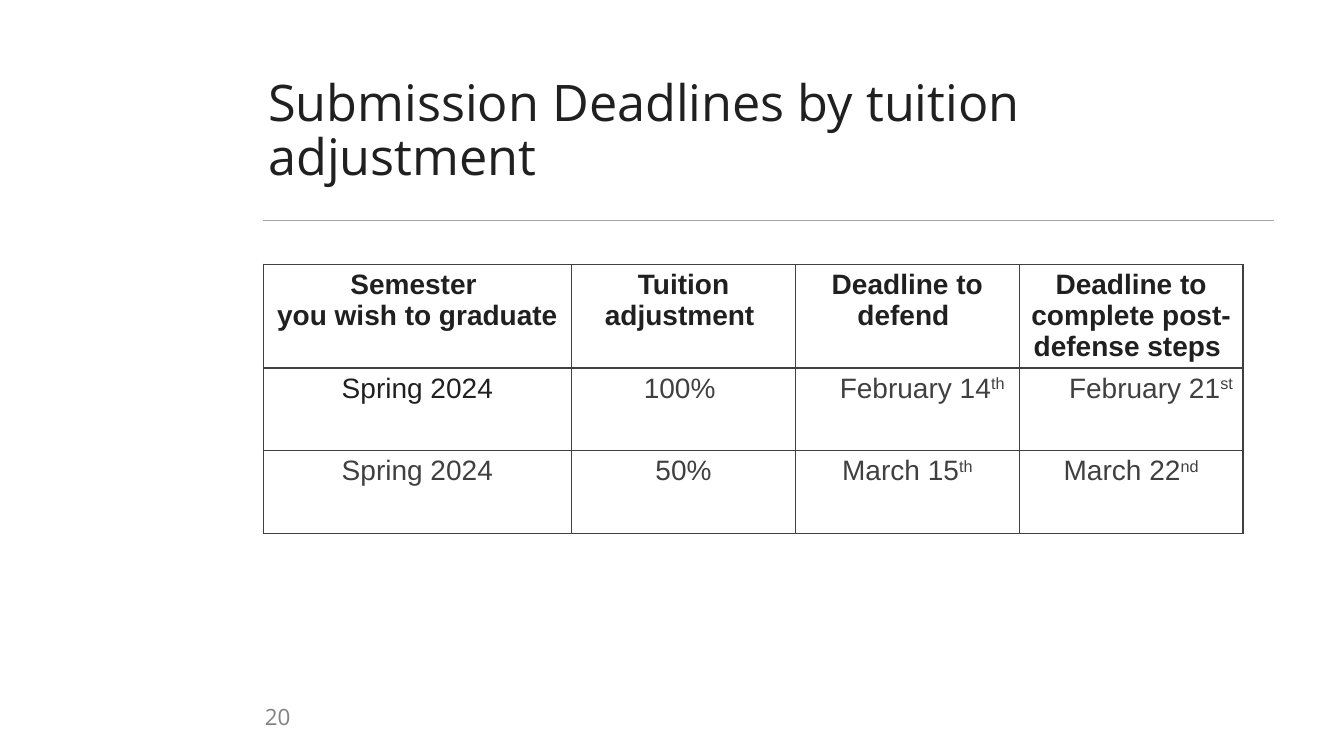
from lxml.etree import SubElement
from pptx import Presentation
from pptx.dml.color import RGBColor
from pptx.enum.shapes import MSO_CONNECTOR
from pptx.enum.text import MSO_ANCHOR, MSO_AUTO_SIZE, PP_ALIGN
from pptx.oxml.ns import qn
from pptx.util import Pt

PX = 9144
COLORS = {"ink": "202020", "body": "404040", "rule": "A5A5A5", "number": "828282"}
HEADERS = [
    ["Semester ", "you wish to graduate"],
    ["Tuition adjustment "],
    ["Deadline to defend "],
    ["Deadline to complete post-defense steps "],
]
DEADLINES = [
    ("Spring 2024", "100% ", ("February 14", "th "), ("February 21", "st")),
    ("Spring 2024", "50%", ("March 15", "th"), ("March 22", "nd")),
]


def px(*lengths):
    return [length * PX for length in lengths]


class DeadlineSlide:
    heading_font = "Open Sans"
    table_font = "Arial"

    def __init__(self, presentation):
        self.slide = presentation.slides.add_slide(presentation.slide_layouts[5])

    def style(self, paragraph, size, color, name, align=PP_ALIGN.LEFT, bold=False):
        paragraph.alignment = align
        font = paragraph.font
        font.name, font.size, font.bold = name, Pt(size), bold
        font.color.rgb = RGBColor.from_string(COLORS[color])

    def frame(self, shape, wrap):
        frame = shape.text_frame
        frame.word_wrap = wrap
        frame.auto_size = MSO_AUTO_SIZE.NONE
        frame.vertical_anchor = MSO_ANCHOR.MIDDLE
        frame.margin_left = frame.margin_right = 5 * PX
        frame.margin_top = frame.margin_bottom = 5 * PX
        return frame

    def title(self, text, *box):
        shape = self.slide.shapes.title
        shape.left, shape.top, shape.width, shape.height = px(*box)
        frame = self.frame(shape, True)
        frame.text = text
        paragraph = frame.paragraphs[0]
        paragraph.line_spacing = 0.9
        self.style(paragraph, 36, "ink", self.heading_font)

    def number(self, text, *box):
        frame = self.frame(self.slide.shapes.add_textbox(*px(*box)), False)
        frame.text = text
        self.style(frame.paragraphs[0], 16, "number", self.heading_font, PP_ALIGN.RIGHT)

    def rule(self, *ends):
        line = self.slide.shapes.add_connector(MSO_CONNECTOR.STRAIGHT, *px(*ends))
        line.line.color.rgb = RGBColor.from_string(COLORS["rule"])
        line.line.width = Pt(1)
        SubElement(line._element.spPr, qn("a:effectLst"))

    def borders(self, cell):
        properties = cell._tc.get_or_add_tcPr()
        for side in ("lnL", "lnR", "lnT", "lnB"):
            border = SubElement(properties, qn(f"a:{side}"), w=str(Pt(1)))
            fill = SubElement(border, qn("a:solidFill"))
            SubElement(fill, qn("a:srgbClr"), val=COLORS["body"])

    def cell(self, cell, lines, color, align=PP_ALIGN.CENTER, bold=False, suffix=""):
        self.borders(cell)
        cell.fill.background()
        cell.margin_left = cell.margin_right = 10 * PX
        cell.margin_top = cell.margin_bottom = 5 * PX
        cell.text_frame.text = "\n".join(lines)
        for paragraph in cell.text_frame.paragraphs:
            self.style(paragraph, 20, color, self.table_font, align, bold)
        if suffix:
            run = cell.text_frame.paragraphs[-1].add_run()
            run.text = suffix
            run._r.get_or_add_rPr().set("baseline", "30000")

    def table(self, left, top, widths, heights):
        box = px(left, top, sum(widths), sum(heights))
        table = self.slide.shapes.add_table(len(heights), len(widths), *box).table
        table.first_row = table.horz_banding = False
        for column, width in zip(table.columns, widths):
            column.width = width * PX
        for row, height in zip(table.rows, heights):
            row.height = height * PX
        for column, lines in enumerate(HEADERS):
            self.cell(table.cell(0, column), lines, "ink", bold=True)
        for row, values in enumerate(DEADLINES, 1):
            for column, value in enumerate(values):
                text, suffix = (value, "") if isinstance(value, str) else value
                color = "ink" if (row, column) == (1, 0) else "body"
                align = PP_ALIGN.RIGHT if row == 1 and suffix else PP_ALIGN.CENTER
                self.cell(table.cell(row, column), [text], color, align, suffix=suffix)


def main():
    presentation = Presentation()
    presentation.slide_width, presentation.slide_height = px(1333, 750)
    deadlines = DeadlineSlide(presentation)
    deadlines.rule(261, 219, 1264, 219)
    deadlines.number("20", 255, 692, 38, 37)
    deadlines.title("Submission Deadlines by tuition adjustment", 261, 65, 757, 132)
    deadlines.table(261, 262, [306, 222, 222, 222], [79, 82, 82])
    presentation.save("out.pptx")


if __name__ == "__main__":
    main()
